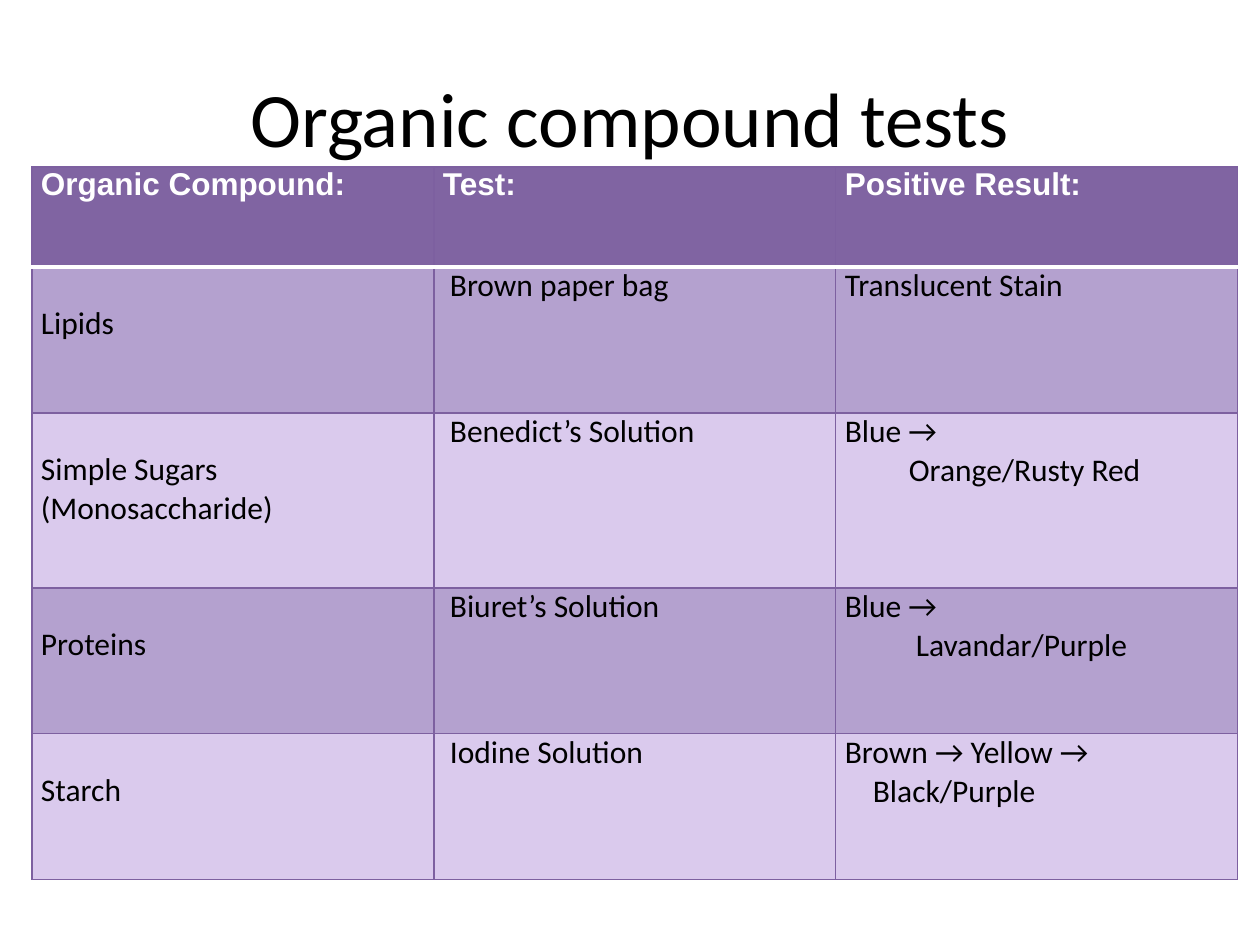
from lxml import etree
from pptx import Presentation
from pptx.dml.color import RGBColor
from pptx.enum.text import MSO_ANCHOR, PP_ALIGN
from pptx.oxml.ns import qn
from pptx.util import Emu, Pt

MIDDLE = MSO_ANCHOR.MIDDLE
TOP = MSO_ANCHOR.TOP
CENTER = PP_ALIGN.CENTER

TITLE = "Organic compound tests"
HEADERS = ["Organic Compound:", "Test:", "Positive Result:"]
TESTS = [
    ("Lipids", "Brown paper bag", ["Translucent Stain"], 0),
    ("Simple Sugars (Monosaccharide)", "Benedict’s Solution",
     ["Blue →", "Orange/Rusty Red"], 64),
    ("Proteins", "Biuret’s Solution", ["Blue →", "Lavandar/Purple"], 71),
    ("Starch", "Iodine Solution", ["Brown → Yellow →", "Black/Purple"], 28),
]
COLORS = {
    "header": "8064A2", "dark": "B4A1CF", "light": "DACAED",
    "border": "7D60A0", "white": "FFFFFF", "black": "000000",
}
COLUMN_WIDTH = 402
ROW_HEIGHTS = [100, 146, 175, 146, 146]
INSET = 9
NAME_DROP = 38
TEST_INDENT = 7


def px(count):
    return Emu(count * 914400 // 126)


def color(name):
    return RGBColor.from_string(COLORS[name])


def format_runs(frame, font, size, color_name, bold=False):
    for para in frame.paragraphs:
        for span in para.runs:
            span.font.name = font
            span.font.size = Pt(size)
            span.font.bold = bold
            span.font.color.rgb = color(color_name)


def add_border(cell, side, color_name, width):
    line = etree.SubElement(cell._tc.get_or_add_tcPr(), qn("a:ln" + side), w=str(Pt(width)))
    fill = etree.SubElement(line, qn("a:solidFill"))
    etree.SubElement(fill, qn("a:srgbClr"), val=COLORS[color_name])


def fill_cell(cell, lines, fill, row, left=0, top=0, hanging=0):
    for side in "LRTB":
        divider = (row, side) in [(0, "B"), (1, "T")]
        add_border(cell, side, *(("white", 2) if divider else ("border", 0.75)))
    cell.fill.solid()
    cell.fill.fore_color.rgb = color(fill)
    cell.margin_left, cell.margin_right = px(INSET + left), px(INSET)
    cell.margin_top, cell.margin_bottom = px(top), 0
    cell.vertical_anchor = TOP
    cell.text_frame.text = "\n".join(lines)
    for para in cell.text_frame.paragraphs[1:]:
        para._p.get_or_add_pPr().set("marL", str(px(hanging)))
    if row == 0:
        format_runs(cell.text_frame, "Arial", 18, "white", True)
    else:
        format_runs(cell.text_frame, "Calibri", 18, "black")


deck = Presentation()
deck.slide_width, deck.slide_height = px(1260), px(945)
page = deck.slides.add_slide(deck.slide_layouts[5])

title = page.shapes.title
title.left, title.top, title.width, title.height = px(63), px(38), px(1134), px(157)
title.text_frame.text = TITLE
title.text_frame.vertical_anchor = MIDDLE
title.text_frame.paragraphs[0].alignment = CENTER
format_runs(title.text_frame, "Calibri", 44, "black")

table = page.shapes.add_table(
    len(ROW_HEIGHTS), len(HEADERS), px(32), px(167),
    px(COLUMN_WIDTH * len(HEADERS)), px(sum(ROW_HEIGHTS))).table
table.horz_banding = False
for column in table.columns:
    column.width = px(COLUMN_WIDTH)
for table_row, height in zip(table.rows, ROW_HEIGHTS):
    table_row.height = px(height)

for index, header in enumerate(HEADERS):
    fill_cell(table.cell(0, index), [header], "header", 0)
for row, (compound, test, result, hanging) in enumerate(TESTS, 1):
    fill = "dark" if row % 2 else "light"
    fill_cell(table.cell(row, 0), [compound], fill, row, top=NAME_DROP)
    fill_cell(table.cell(row, 1), [test], fill, row, left=TEST_INDENT)
    fill_cell(table.cell(row, 2), result, fill, row, hanging=hanging)

deck.save("out.pptx")
